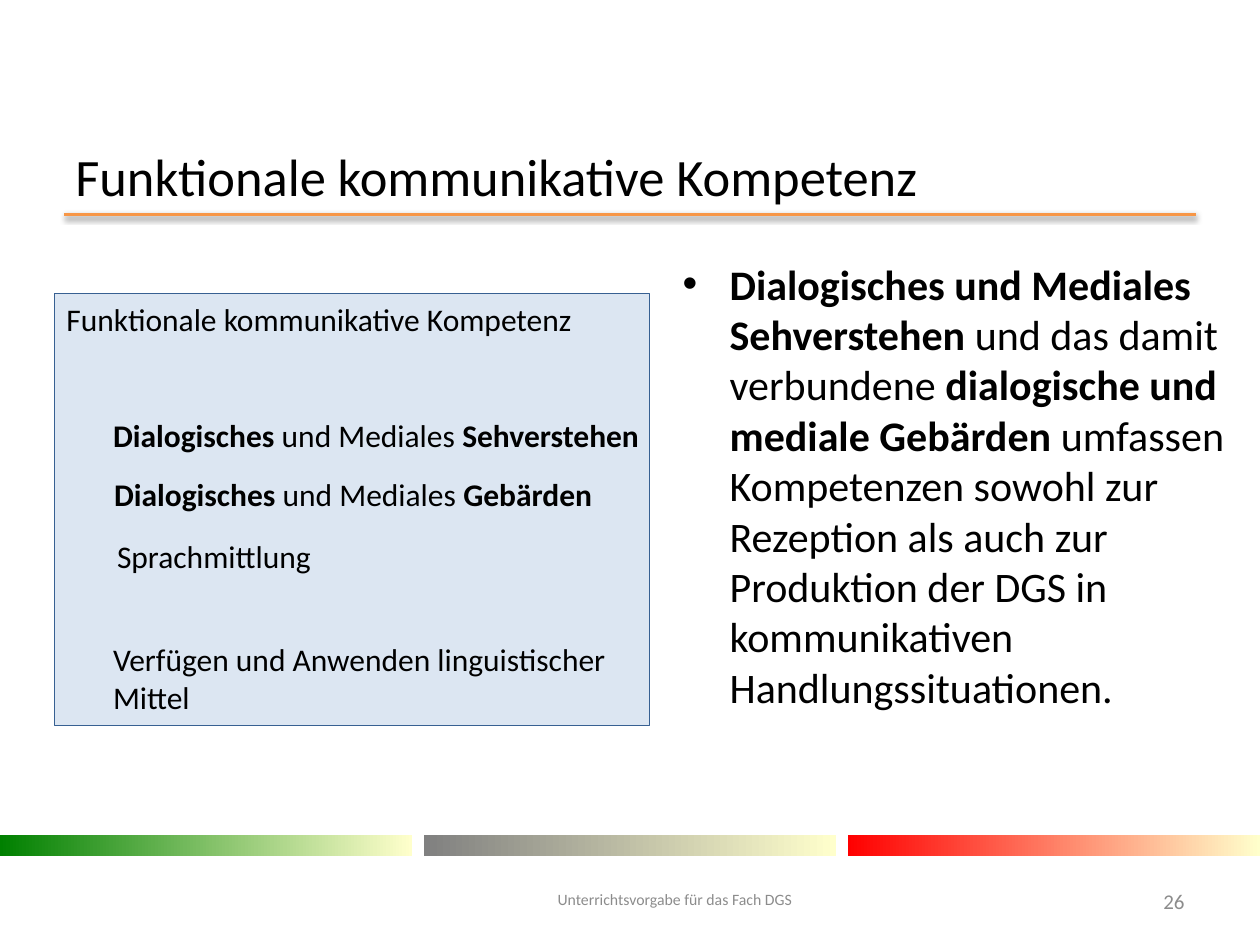
from lxml import etree
from pptx import Presentation
from pptx.dml.color import RGBColor
from pptx.enum import shapes, text
from pptx.oxml.ns import qn
from pptx.util import Cm, Pt

BLACK = RGBColor(0, 0, 0)
WHITE = RGBColor(255, 255, 255)
GREY = RGBColor(0x8C, 0x8C, 0x8C)
ORANGE = RGBColor(0xF7, 0x96, 0x46)
PALE = RGBColor(0xDC, 0xE6, 0xF2)
BLUE = RGBColor(0x37, 0x60, 0x92)
CREAM = RGBColor(0xFF, 0xFF, 0xCC)
BARS = [RGBColor(0, 0x80, 0), RGBColor(0x80, 0x80, 0x80), RGBColor(255, 0, 0)]

TOP, MIDDLE = text.MSO_ANCHOR.TOP, text.MSO_ANCHOR.MIDDLE
LEFT, CENTER, RIGHT = text.PP_ALIGN.LEFT, text.PP_ALIGN.CENTER, text.PP_ALIGN.RIGHT
WIDE = 25.4


def lengths(box):
    return [Cm(n) for n in box]


def write(shape, runs, size, color=BLACK, align=LEFT, anchor=TOP):
    """Write (text, bold) runs as one paragraph and return it."""
    frame = shape.text_frame
    frame.word_wrap = True
    frame.vertical_anchor = anchor
    para = frame.paragraphs[0]
    para.alignment = align
    for words, bold in runs:
        run = para.add_run()
        run.text = words
        font = run.font
        font.name, font.size, font.bold = "Calibri", Pt(size), bold
        font.color.rgb = color
    return para


def add_text(slide, box, *args, **kwargs):
    return write(slide.shapes.add_textbox(*lengths(box)), *args, **kwargs)


def add_rect(slide, box):
    rect = slide.shapes.add_shape(shapes.MSO_SHAPE.RECTANGLE, *lengths(box))
    rect.shadow.inherit = False
    rect.line.fill.background()
    return rect


def add_head(slide, box):
    x, y, w, h = box
    rule = slide.shapes.add_connector(
        shapes.MSO_CONNECTOR.STRAIGHT, *lengths((x, y + 1.2, x + w, y + 1.2)))
    rule.line.color.rgb = ORANGE
    rule.line.width = Pt(2)
    effects = etree.SubElement(rule._element.spPr, qn("a:effectLst"))
    shadow = etree.SubElement(effects, qn("a:outerShdw"), blurRad=str(Pt(3.1)),
                              dist=str(Pt(1.6)), dir="5400000", rotWithShape="0")
    tone = etree.SubElement(shadow, qn("a:srgbClr"), val="000000")
    etree.SubElement(tone, qn("a:alpha"), val="38000")
    para = add_text(slide, (x - 0.03, y, w, h),
                    [("Funktionale kommunikative Kompetenz", False)], 30, anchor=MIDDLE)
    para.line_spacing = 0.9


def add_bars(slide, box):
    x, y, w, h = box
    width = 8.31
    step = (w - width) / (len(BARS) - 1)
    for i, color in enumerate(BARS):
        bar = add_rect(slide, (x + i * step, y, width, h))
        bar.fill.gradient()
        bar.fill.gradient_angle = 0
        for stop, tone in zip(bar.fill.gradient_stops, (color, CREAM)):
            stop.color.rgb = tone


def add_body(slide, box):
    body = add_rect(slide, box)
    body.fill.solid()
    body.fill.fore_color.rgb = WHITE
    para = write(body, [
        ("Dialogisches und Mediales Sehverstehen ", True),
        ("und das damit verbundene ", False),
        ("dialogische und mediale Gebärden ", True),
        ("umfassen Kompetenzen sowohl zur Rezeption als auch zur Produktion "
         "der DGS in kommunikativen Handlungssituationen.", False)], 24)
    props = para._p.get_or_add_pPr()
    props.set("marL", str(Cm(0.95)))
    props.set("indent", str(-Cm(0.95)))
    etree.SubElement(props, qn("a:buFont"), typeface="Arial")
    etree.SubElement(props, qn("a:buChar"), char="•")


def add_panel(slide, box):
    x, y, w, h = box
    panel = add_rect(slide, box)
    panel.fill.solid()
    panel.fill.fore_color.rgb = PALE
    panel.line.color.rgb = BLUE
    panel.line.width = Pt(0.25)
    write(panel, [("Funktionale kommunikative Kompetenz", False)], 18)

    def pair(skill):
        return [("Dialogisches ", True), ("und Mediales ", False), (skill, True)]

    items = [
        (0.94, 2.34, 1.02, pair("Sehverstehen")),
        (0.96, 3.53, 1.02, pair("Gebärden")),
        (1.02, 4.78, 1.02, [("Sprachmittlung", False)]),
        (0.94, 6.86, 1.8, [("Verfügen und Anwenden linguistischer Mittel", False)]),
    ]
    for dx, dy, high, runs in items:
        add_text(slide, (x + dx, y + dy, w - 0.76, high), runs, 18)


def add_foot(slide, box):
    x, y, w, h = box
    note = add_text(slide, (x, y, 8.2, h), [("Unterrichtsvorgabe für das Fach DGS", False)],
                    9, GREY, CENTER, MIDDLE)
    note.line_spacing = 0.9
    page = add_text(slide, (x + w - 1.63, y, 1.63, h), [("26", False)],
                    12, GREY, RIGHT, MIDDLE)
    for para in (note, page):
        para.space_after = Pt(6)


def main():
    deck = Presentation()
    deck.slide_width, deck.slide_height = Cm(WIDE), Cm(19.05)
    slide = deck.slides.add_slide(deck.slide_layouts[6])
    add_head(slide, (1.3, 3.12, 22.8, 0.99))
    add_bars(slide, (0, 16.84, WIDE, 0.41))
    add_body(slide, (13.51, 5.08, 11.73, 11.61))
    add_foot(slide, (9.5, 17.65, 14.63, 1.02))
    add_panel(slide, (1.09, 5.92, 11.99, 8.71))
    deck.save("out.pptx")


if __name__ == "__main__":
    main()
